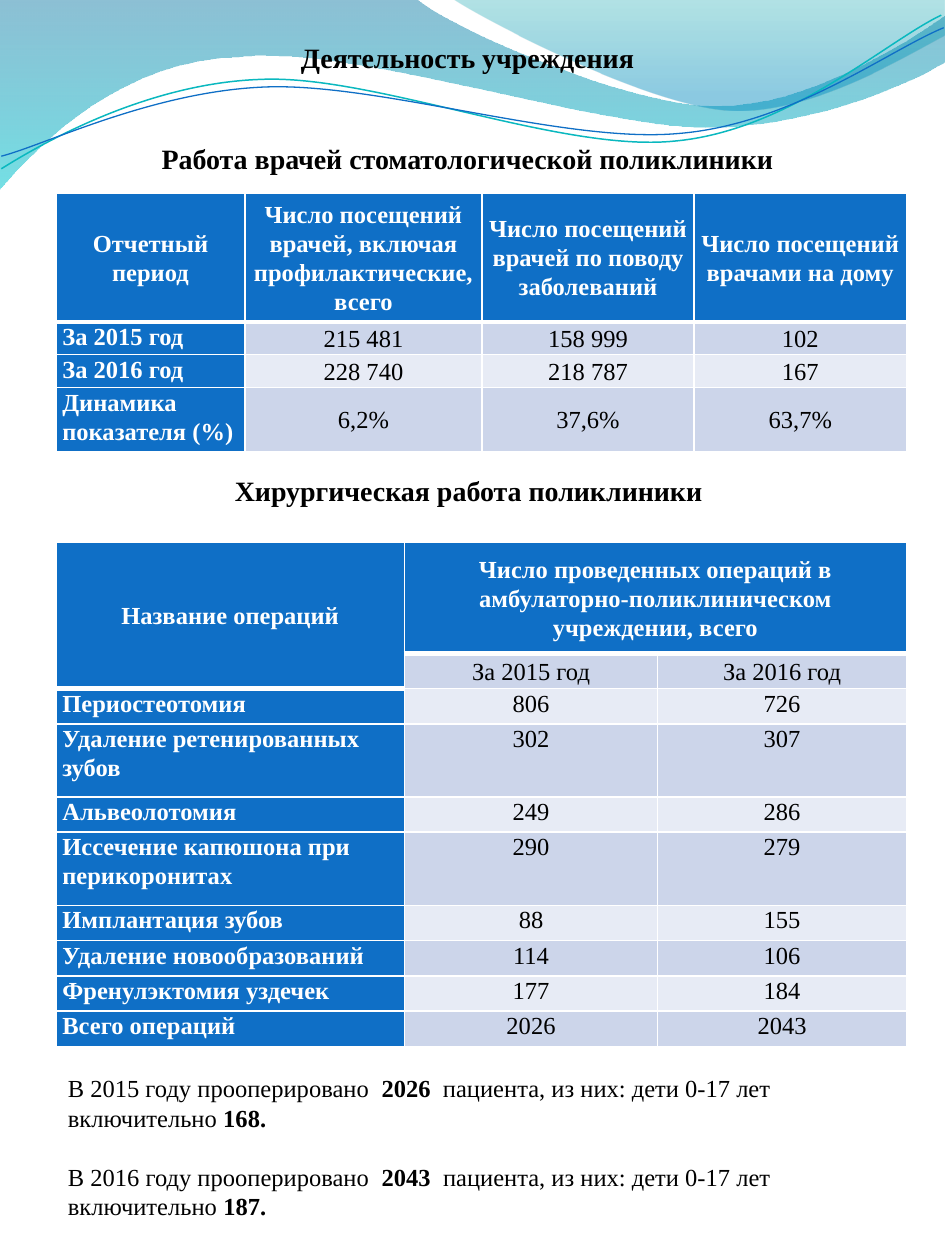
from dataclasses import dataclass
from math import cos, radians, sin

from lxml import etree
from pptx import Presentation
from pptx import util as u
from pptx.dml.color import RGBColor
from pptx.enum import text
from pptx.oxml.ns import qn

FONT = "Times New Roman"
BLUE, WHITE, BLACK = "0F6FC6", "FFFFFF", "000000"
BANDS = ("E7EBF5", "CCD5EA")
CENTER, LEFT = text.PP_ALIGN.CENTER, text.PP_ALIGN.LEFT
MIDDLE, TOP = text.MSO_ANCHOR.MIDDLE, text.MSO_ANCHOR.TOP
TILT = 357.3

presentation = Presentation()
presentation.slide_width, presentation.slide_height = u.Inches(7.5), u.Inches(10)
slide = presentation.slides.add_slide(presentation.slide_layouts[6])

# The slide is a grid of 75 columns by 100 rows
COLUMN = presentation.slide_width / 75
ROW = presentation.slide_height / 100


@dataclass
class Wave:
    """Segments of two numbers are straight; segments of six are Bezier curves."""
    start: tuple[float, float]
    segments: list[tuple[float, ...]]
    stops: tuple = ()  # position, colour, opacity in percent
    line: tuple = ()  # colour, width in points
    pivot: tuple = ()  # centre of a tilted wave


@dataclass
class Grid:
    top: float
    columns: tuple[float, ...]
    rows: tuple[float, ...]
    header_depth: tuple[int, ...]
    middle_rows: tuple[int, ...]
    cells: list[tuple[str, ...]]
    merges: tuple = ()


@dataclass
class Label:
    box: tuple[float, float, float, float]
    paragraphs: list[list[tuple[str, bool]]]  # runs of text and boldness
    size: float = 16
    align: text.PP_ALIGN = CENTER
    gap: float = 0


def rgb(value: str) -> RGBColor:
    return RGBColor.from_string(value)


def format_run(run, size: float, color: str, bold: bool) -> None:
    run.font.name, run.font.size, run.font.bold = FONT, u.Pt(size), bold
    run.font.color.rgb = rgb(color)


def level(point: tuple[float, float], pivot: tuple[float, float]) -> tuple[float, float]:
    """Undo the tilt that the shape's rotation will add."""
    angle = radians(-TILT)
    dx, dy = point[0] - pivot[0], point[1] - pivot[1]
    return (pivot[0] + dx * cos(angle) - dy * sin(angle),
            pivot[1] + dx * sin(angle) + dy * cos(angle))


def join_curves(shape, segments: list[tuple[float, ...]]) -> None:
    """Turn each three points of a six-number segment into one Bezier curve."""
    lines = shape._element.iter(qn("a:lnTo"))
    lines = iter(list(lines))
    for segment in segments:
        group = [next(lines) for _ in range(len(segment) // 2)]
        if len(group) == 3:
            curve = etree.Element(qn("a:cubicBezTo"))
            group[0].addprevious(curve)
            for line in group:
                curve.append(line[0])
                line.getparent().remove(line)


def draw_wave(wave: Wave) -> None:
    points = [wave.start]
    for segment in wave.segments:
        points += zip(segment[::2], segment[1::2])
    if wave.pivot:
        points = [level(point, wave.pivot) for point in points]
    scaled = [(round(x * COLUMN), round(y * ROW)) for x, y in points]
    builder = slide.shapes.build_freeform(*scaled[0])
    builder.add_line_segments(scaled[1:], close=bool(wave.stops))
    shape = builder.convert_to_shape()
    join_curves(shape, wave.segments)
    shape.shadow.inherit = False
    if wave.line:
        color, width = wave.line
        shape.rotation = TILT
        shape.fill.background()
        shape.line.color.rgb, shape.line.width = rgb(color), u.Pt(width)
        return
    shape.line.fill.background()
    shape.fill.gradient()
    shape.fill.gradient_angle = 270
    for stop, (position, color, _) in zip(shape.fill.gradient_stops, wave.stops):
        stop.position, stop.color.rgb = position / 100, rgb(color)
    colors = shape.fill._xPr.iter(qn("a:srgbClr"))
    for element, (_, _, opacity) in zip(colors, wave.stops):
        etree.SubElement(element, qn("a:alpha"), val=str(opacity * 1000))


def set_borders(cell, top: float, bottom: float) -> None:
    properties = cell._tc.get_or_add_tcPr()
    widths = {"a:lnL": 1, "a:lnR": 1, "a:lnT": top, "a:lnB": bottom}
    for index, (tag, width) in enumerate(widths.items()):
        line = etree.Element(qn(tag), w=str(u.Pt(width)))
        fill = etree.SubElement(line, qn("a:solidFill"))
        etree.SubElement(fill, qn("a:srgbClr"), val=WHITE)
        properties.insert(index, line)


def draw_table(grid: Grid) -> None:
    table = slide.shapes.add_table(
        len(grid.rows), len(grid.columns), round(4.45 * COLUMN), round(grid.top * ROW),
        round(sum(grid.columns) * COLUMN), round(sum(grid.rows) * ROW)).table
    table.first_row = table.horz_banding = False
    for column, width in zip(table.columns, grid.columns):
        column.width = round(width * COLUMN)
    for row, height in zip(table.rows, grid.rows):
        row.height = round(height * ROW)
    for first, last in grid.merges:
        table.cell(*first).merge(table.cell(*last))
    for r, values in enumerate(grid.cells):
        for c, value in enumerate(values):
            cell, depth = table.cell(r, c), grid.header_depth[c]
            header, named = r < depth, c == 0
            strong = header or named
            cell.fill.solid()
            cell.fill.fore_color.rgb = rgb(BLUE if strong else BANDS[r % 2])
            set_borders(cell, 3 if r == depth else 1, 3 if header else 1)
            cell.margin_left = cell.margin_right = u.Inches(0.05)
            cell.margin_top = cell.margin_bottom = 0
            centred = header or (r in grid.middle_rows and not named)
            cell.vertical_anchor = MIDDLE if centred else TOP
            if not value:
                continue
            paragraph = cell.text_frame.paragraphs[0]
            paragraph.text = value
            paragraph.line_spacing = 1.07
            paragraph.alignment = LEFT if named and not header else CENTER
            format_run(paragraph.runs[0], 14, WHITE if strong else BLACK, strong)


def draw_label(label: Label) -> None:
    left, top, width, height = label.box
    frame = slide.shapes.add_textbox(round(left * COLUMN), round(top * ROW),
                                     round(width * COLUMN), round(height * ROW)).text_frame
    frame.word_wrap = True
    for index, runs in enumerate(label.paragraphs):
        paragraph = frame.add_paragraph() if index else frame.paragraphs[0]
        paragraph.alignment = label.align
        paragraph.space_before = u.Pt(label.gap if index else 0)
        for content, bold in runs:
            run = paragraph.add_run()
            run.text = content
            format_run(run, label.size, BLACK, bold)


# Wave decoration at the top
WAVES = [
    Wave((0, -0.1), [(33, -0.1), (35.7, 2.2, 49.8, 8.4, 56.9, 8.4), (64, 8.4, 71.9, 3.4, 75, 1.2),
                     (75.1, 4.8), (73.8, 5.8, 65.2, 10.1, 55.9, 10.1),
                     (46.6, 10, 28.6, 3.7, 19.3, 4.5), (9.7, 4.7, 3.4, 11.1, -0.1, 15.1)],
         stops=((0, "0074A1", 45), (100, "00C6CF", 55))),
    Wave((35.9, -0.1), [(38.2, 1.5, 51.1, 8.2, 57.7, 8.7), (64.2, 9.2, 72.1, 4.3, 75, 2.8), (75, 0)],
         stops=((0, "00A1A9", 30), (80, "008BBF", 45))),
    Wave((0.1, 13.4), [(3.6, 11.2, 11.8, 6.6, 20.7, 6.3), (29.6, 5.9, 44.5, 12.1, 53.5, 11.2),
                       (62.6, 10.4, 70.3, 3.3, 74.7, 1.2)], line=("0AB8BF", 0.85), pivot=(37.4, 7.75)),
    Wave((0.1, 12.4), [(3.6, 11.5, 12.2, 7.2, 21.2, 6.9), (30.2, 6.6, 44.9, 11.4, 53.8, 10.6),
                       (62.8, 9.9, 70.5, 4, 74.9, 2.2)], line=("0F6FC6", 0.75), pivot=(37.5, 7.85)),
]

# Visits and operations
TABLES = [
    Grid(15.35, (15, 18.8, 16.85, 16.85), (10.2, 2.6, 2.6, 5.1), (1, 1, 1, 1), (1, 2, 3), [
        ("Отчетный период", "Число посещений врачей, включая профилактические, всего",
         "Число посещений врачей по поводу заболеваний", "Число посещений врачами на дому"),
        ("За 2015 год", "215 481", "158 999", "102"),
        ("За 2016 год", "228 740", "218 787", "167"),
        ("Динамика показателя (%)", "6,2%", "37,6%", "63,7%")]),
    Grid(43.05, (27.65, 20.1, 19.75), (8.8, 2.8, 2.8, 5.8, 2.8, 5.8, 2.8, 2.8, 2.8, 2.8), (2, 1, 1), (1,), [
        ("Название операций",
         "Число проведенных операций в амбулаторно-поликлиническом учреждении, всего", ""),
        ("", "За 2015 год", "За 2016 год"),
        ("Периостеотомия", "806", "726"),
        ("Удаление ретенированных зубов", "302", "307"),
        ("Альвеолотомия", "249", "286"),
        ("Иссечение капюшона при перикоронитах", "290", "279"),
        ("Имплантация зубов", "88", "155"),
        ("Удаление новообразований", "114", "106"),
        ("Френулэктомия уздечек", "177", "184"),
        ("Всего операций", "2026", "2043")],
        merges=(((0, 0), (1, 0)), ((0, 1), (0, 2)))),
]

# Headings and closing notes
LABELS = [
    Label((7.55, 2.75, 59.1, 11.8), [[("Деятельность учреждения", True)],
                                     [("Работа врачей стоматологической поликлиники", True)]], gap=38.5),
    Label((12.4, 37.1, 49.6, 3.7), [[("Хирургическая работа поликлиники", True)]]),
]
for top, width, year, patients, children in ((84.7, 67.7, 2015, 2026, 168), (91.7, 66.1, 2016, 2043, 187)):
    LABELS.append(Label((4.4, top, width, 5.7), [[
        (f"В {year} году прооперировано  ", False), (f"{patients}", True),
        ("  пациента, из них: дети 0-17 лет включительно ", False), (f"{children}.", True)]],
        size=14, align=LEFT))

for wave in WAVES:
    draw_wave(wave)
for grid in TABLES:
    draw_table(grid)
for label in LABELS:
    draw_label(label)

presentation.save("out.pptx")
